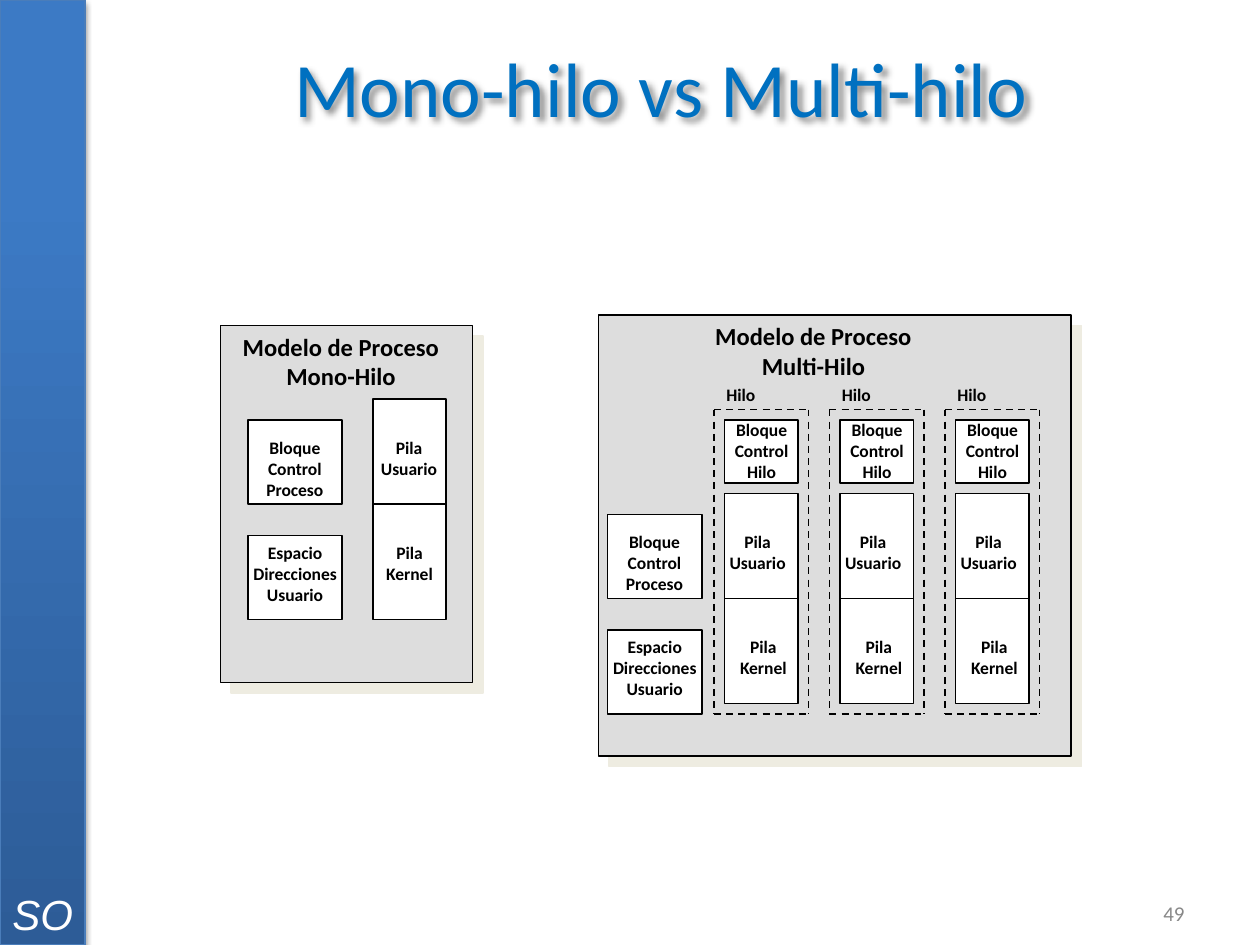
from dataclasses import dataclass

from lxml import etree
from pptx import Presentation
from pptx.dml.color import RGBColor
from pptx.enum.dml import MSO_LINE
from pptx.enum.shapes import MSO_CONNECTOR, MSO_SHAPE
from pptx.enum.text import MSO_ANCHOR, MSO_AUTO_SIZE, PP_ALIGN
from pptx.oxml.ns import qn
from pptx.util import Emu, Inches, Pt

STRAIGHT = MSO_CONNECTOR.STRAIGHT
RECTANGLE = MSO_SHAPE.RECTANGLE
DASH = MSO_LINE.DASH
LEFT, CENTER, RIGHT = PP_ALIGN.LEFT, PP_ALIGN.CENTER, PP_ALIGN.RIGHT
TOP, MIDDLE = MSO_ANCHOR.TOP, MSO_ANCHOR.MIDDLE
FIT_SHAPE, NO_FIT = MSO_AUTO_SIZE.SHAPE_TO_FIT_TEXT, MSO_AUTO_SIZE.NONE

SLIDE_WIDTH, SLIDE_HEIGHT = Inches(10), Inches(7.5)
COLUMNS, ROWS = 120, 90
BLACK, WHITE, GRAY = "000000", "FFFFFF", "DDDDDD"
THREAD_COLUMNS = [68 + 11 * index for index in range(3)]


@dataclass
class Area:
    column: float
    row: float
    columns: float
    rows: float


@dataclass
class Shadow:
    color: str
    alpha: int
    blur: float
    distance: float
    angle: int


@dataclass
class Label:
    area: Area
    lines: list[str]
    size: float = 10
    color: str = BLACK
    font: str = "Calibri"
    align: PP_ALIGN = CENTER
    anchor: MSO_ANCHOR = TOP
    bold: bool = True
    italic: bool = False
    grow: bool = True


PANEL_SHADOW = Shadow("EEECE1", 100, 0, 8.5, 45)
BAR_SHADOW = Shadow(BLACK, 35, 3.1, 1.8, 90)
TITLE_SHADOW = Shadow(BLACK, 43, 4, 3, 45)


def across(columns: float) -> Emu:
    return Emu(round(SLIDE_WIDTH * columns / COLUMNS))


def down(rows: float) -> Emu:
    return Emu(round(SLIDE_HEIGHT * rows / ROWS))


def place(area: Area) -> tuple:
    return across(area.column), down(area.row), across(area.columns), down(area.rows)


def rgb(color: str) -> RGBColor:
    return RGBColor.from_string(color)


def cast_shadow(shape, shadow: Shadow) -> None:
    shape.shadow.inherit = False
    effects = shape._element.spPr.find(qn("a:effectLst"))
    outer = etree.SubElement(
        effects, qn("a:outerShdw"), blurRad=str(Pt(shadow.blur)),
        dist=str(Pt(shadow.distance)), dir=str(shadow.angle * 60000),
        algn="ctr", rotWithShape="0")
    color = etree.SubElement(outer, qn("a:srgbClr"), val=shadow.color)
    etree.SubElement(color, qn("a:alpha"), val=str(shadow.alpha * 1000))


def draw_box(page, area: Area, fill: str = WHITE):
    box = page.shapes.add_shape(RECTANGLE, *place(area))
    box.shadow.inherit = False
    box.fill.solid()
    box.fill.fore_color.rgb = rgb(fill)
    box.line.color.rgb = rgb(BLACK)
    box.line.width = Pt(1)
    return box


def draw_line(page, start: tuple, end: tuple, dashed: bool = False):
    line = page.shapes.add_connector(
        STRAIGHT, across(start[0]), down(start[1]), across(end[0]), down(end[1]))
    line.line.color.rgb = rgb(BLACK)
    line.line.width = Pt(1)
    if dashed:
        line.line.dash_style = DASH
    etree.SubElement(line._element.spPr, qn("a:effectLst"))
    return line


def draw_label(page, label: Label):
    box = page.shapes.add_textbox(*place(label.area))
    frame = box.text_frame
    frame.word_wrap = not label.grow
    frame.auto_size = FIT_SHAPE if label.grow else NO_FIT
    frame.vertical_anchor = label.anchor
    for index, line in enumerate(label.lines):
        para = frame.add_paragraph() if index else frame.paragraphs[0]
        para.alignment = label.align
        span = para.add_run()
        span.text = line
        span.font.name = label.font
        span.font.size = Pt(label.size)
        span.font.bold = label.bold
        span.font.italic = label.italic
        span.font.color.rgb = rgb(label.color)
    return box


def draw_frame(page) -> None:
    bar = page.shapes.add_shape(RECTANGLE, *place(Area(0, 0, 8.1, ROWS)))
    bar.fill.gradient()
    bar.fill.gradient_angle = 90
    for stop, color, position in zip(bar.fill.gradient_stops, ("2D5C97", "3C7AC5"), (0, 0.8)):
        stop.color.rgb = rgb(color)
        stop.position = position
    bar.line.color.rgb = rgb("4A7DBA")
    bar.line.width = Pt(0.75)
    cast_shadow(bar, BAR_SHADOW)
    draw_label(page, Label(Area(0, 84, 8.25, 6), ["SO"], 24, WHITE, "Arial",
                           LEFT, bold=False, italic=True))
    draw_label(page, Label(Area(107.25, 84.6, 6.75, 4.8), ["49"], 12, "888888",
                           align=RIGHT, anchor=MIDDLE, bold=False, grow=False))
    title = draw_label(page, Label(Area(8.1, 3.6, 109.75, 9.25), ["Mono-hilo vs Multi-hilo"],
                                   44, "0070C0", anchor=MIDDLE, bold=False, grow=False))
    cast_shadow(title, TITLE_SHADOW)


def draw_panel(page, area: Area, heading_column: float, model: str) -> None:
    cast_shadow(draw_box(page, area, GRAY), PANEL_SHADOW)
    draw_label(page, Label(Area(heading_column, area.row, 21.25, 6.85),
                           ["Modelo de Proceso", model], 14))


def draw_process(page, column: float, row: float) -> None:
    draw_box(page, Area(column, row, 9, 8))
    draw_box(page, Area(column, row + 11, 9, 8))
    draw_label(page, Label(Area(column + 0.5, row + 1, 7.95, 7.3),
                           ["Bloque", "Control", "Proceso"]))
    draw_label(page, Label(Area(column - 0.7, row + 11, 10.4, 7.3),
                           ["Espacio", "Direcciones", "Usuario"]))


def draw_stack_labels(page, user: tuple, kernel: tuple) -> None:
    draw_label(page, Label(Area(*user, 7.8, 5.3), ["Pila", "Usuario"]))
    draw_label(page, Label(Area(*kernel, 7, 5.3), ["Pila", "Kernel"]))


def draw_thread(page, column: float) -> None:
    stack = draw_box(page, Area(column + 1, 47, 7, 20))
    draw_box(page, Area(column + 1, 40, 7, 6))
    divider = draw_line(page, (column + 1, 57), (column + 8, 57))
    divider.begin_connect(stack, 1)
    divider.end_connect(stack, 3)
    corners = [(column, 39), (column + 9, 39), (column + 9, 68), (column, 68)]
    for first, second in ((0, 1), (1, 2), (0, 3), (3, 2)):
        draw_line(page, corners[first], corners[second], dashed=True)
    draw_label(page, Label(Area(column + 0.7, 39.35, 7.65, 7.3), ["Bloque", "Control", "Hilo"]))
    draw_stack_labels(page, (column + 0.25, 50), (column + 1.2, 60))
    draw_label(page, Label(Area(column, 36, 5.3, 3.25), ["Hilo"], align=LEFT))


def main() -> None:
    deck = Presentation()
    deck.slide_width, deck.slide_height = SLIDE_WIDTH, SLIDE_HEIGHT
    page = deck.slides.add_slide(deck.slide_layouts[6])
    draw_frame(page)
    draw_panel(page, Area(21, 31, 24, 34), 21.85, "Mono-Hilo")
    draw_process(page, 23.6, 40)
    draw_box(page, Area(35.5, 38, 7, 21))
    draw_line(page, (35.5, 48), (42.5, 48))
    draw_stack_labels(page, (35.05, 41), (35.5, 51))
    draw_panel(page, Area(57, 30, 45, 42), 66.85, "Multi-Hilo")
    draw_process(page, 57.85, 49)
    for column in THREAD_COLUMNS:
        draw_thread(page, column)
    deck.save("out.pptx")


if __name__ == "__main__":
    main()
